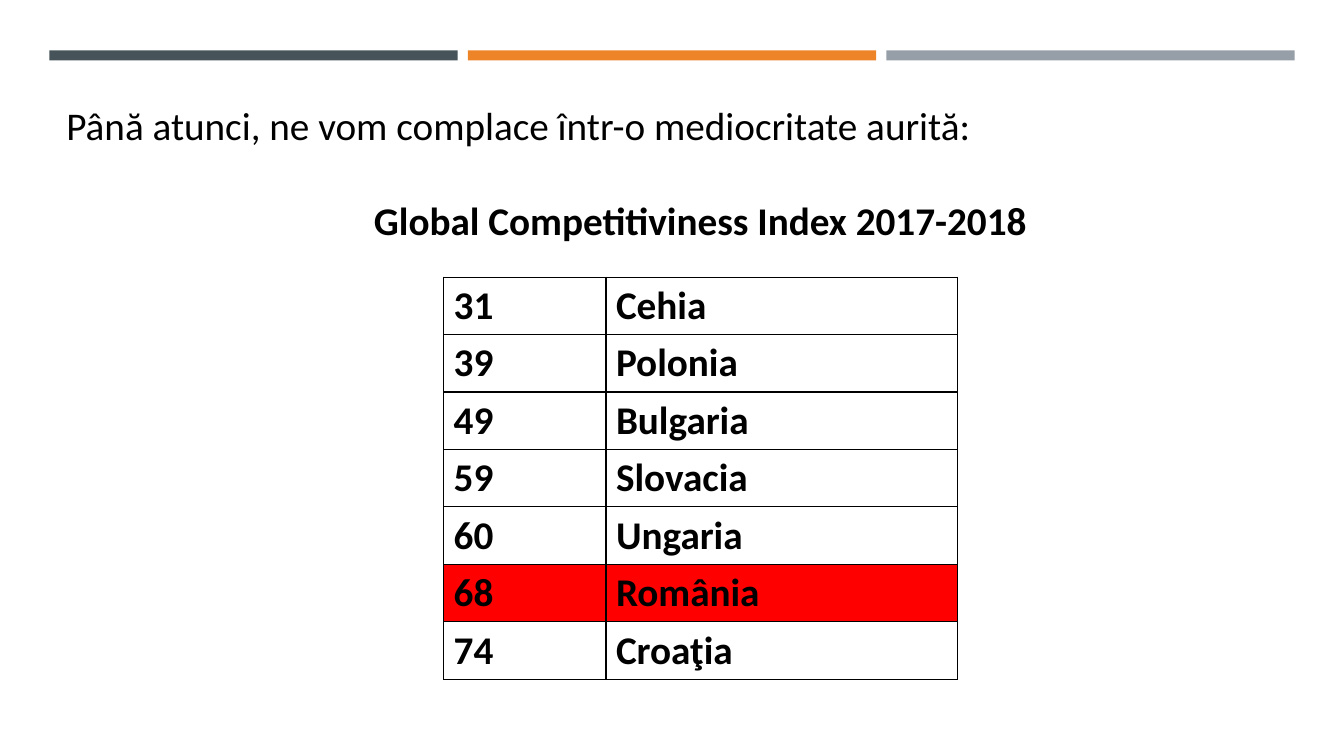
import pptx
import pptx.util
import pptx.dml.color
import pptx.enum.shapes
import pptx.enum.text
import lxml.etree

Inches = pptx.util.Inches
Align = pptx.enum.text.PP_ALIGN

INTRO = "Până atunci, ne vom complace într-o mediocritate aurită:"
TITLE = "Global Competitiviness Index 2017-2018"
RANKS = [
    ("31", "Cehia"),
    ("39", "Polonia"),
    ("49", "Bulgaria"),
    ("59", "Slovacia"),
    ("60", "Ungaria"),
    ("68", "România"),
    ("74", "Croaţia"),
]
MARKED = "România"
WIDTHS = (1.61, 3.49)
ROW = 0.57

THEME = {
    "font": "Calibri",
    "size": 28,
    "ink": "000000",
    "mark": "FF0000",
    "bars": ("465359", "ED8428", "969FA7"),
    "border": 1,
}


def color(code):
    return pptx.dml.color.RGBColor.from_string(code)


def write(para, text, bold=False, align=Align.LEFT, before=0):
    para.alignment = align
    para.space_before = pptx.util.Pt(before)
    run = para.add_run()
    run.text = text
    run.font.name = THEME["font"]
    run.font.size = pptx.util.Pt(THEME["size"])
    run.font.bold = bold
    run.font.color.rgb = color(THEME["ink"])


def frame(cell):
    props = cell._tc.get_or_add_tcPr()
    space = "{http://schemas.openxmlformats.org/drawingml/2006/main}"
    for spot, side in enumerate(("lnL", "lnR", "lnT", "lnB")):
        line = lxml.etree.Element(space + side, w=str(pptx.util.Pt(THEME["border"])))
        fill = lxml.etree.SubElement(line, space + "solidFill")
        lxml.etree.SubElement(fill, space + "srgbClr", val=THEME["ink"])
        props.insert(spot, line)


def draw_bars(slide):
    left, width, gap = 0.49, 4.05, 0.1
    for col, code in enumerate(THEME["bars"]):
        bar = slide.shapes.add_shape(
            pptx.enum.shapes.MSO_SHAPE.RECTANGLE,
            Inches(left + col * (width + gap)), Inches(0.5), Inches(width), Inches(0.1))
        bar.shadow.inherit = False
        bar.fill.solid()
        bar.fill.fore_color.rgb = color(code)
        bar.line.fill.background()


def draw_text(slide):
    box = slide.shapes.add_textbox(Inches(0.56), Inches(0.96), Inches(12.77), Inches(1.99))
    body = box.text_frame
    body.word_wrap = True
    write(body.paragraphs[0], INTRO)
    write(body.add_paragraph(), TITLE, bold=True, align=Align.CENTER, before=34)


def draw_table(slide):
    table = slide.shapes.add_table(
        len(RANKS), len(WIDTHS), Inches(4.4), Inches(2.75),
        Inches(sum(WIDTHS)), Inches(ROW * len(RANKS))).table
    table.first_row = False
    table.horz_banding = False
    for col, width in zip(table.columns, WIDTHS):
        col.width = Inches(width)
    for row, rank in zip(table.rows, RANKS):
        row.height = Inches(ROW)
        for cell, text in zip(row.cells, rank):
            if MARKED in rank:
                cell.fill.solid()
                cell.fill.fore_color.rgb = color(THEME["mark"])
            else:
                cell.fill.background()
            frame(cell)
            write(cell.text_frame.paragraphs[0], text, bold=True)


def main():
    deck = pptx.Presentation()
    deck.slide_width = Inches(13.33)
    deck.slide_height = Inches(7.5)
    slide = deck.slides.add_slide(deck.slide_layouts[6])
    draw_bars(slide)
    draw_text(slide)
    draw_table(slide)
    deck.save("out.pptx")


if __name__ == "__main__":
    main()
